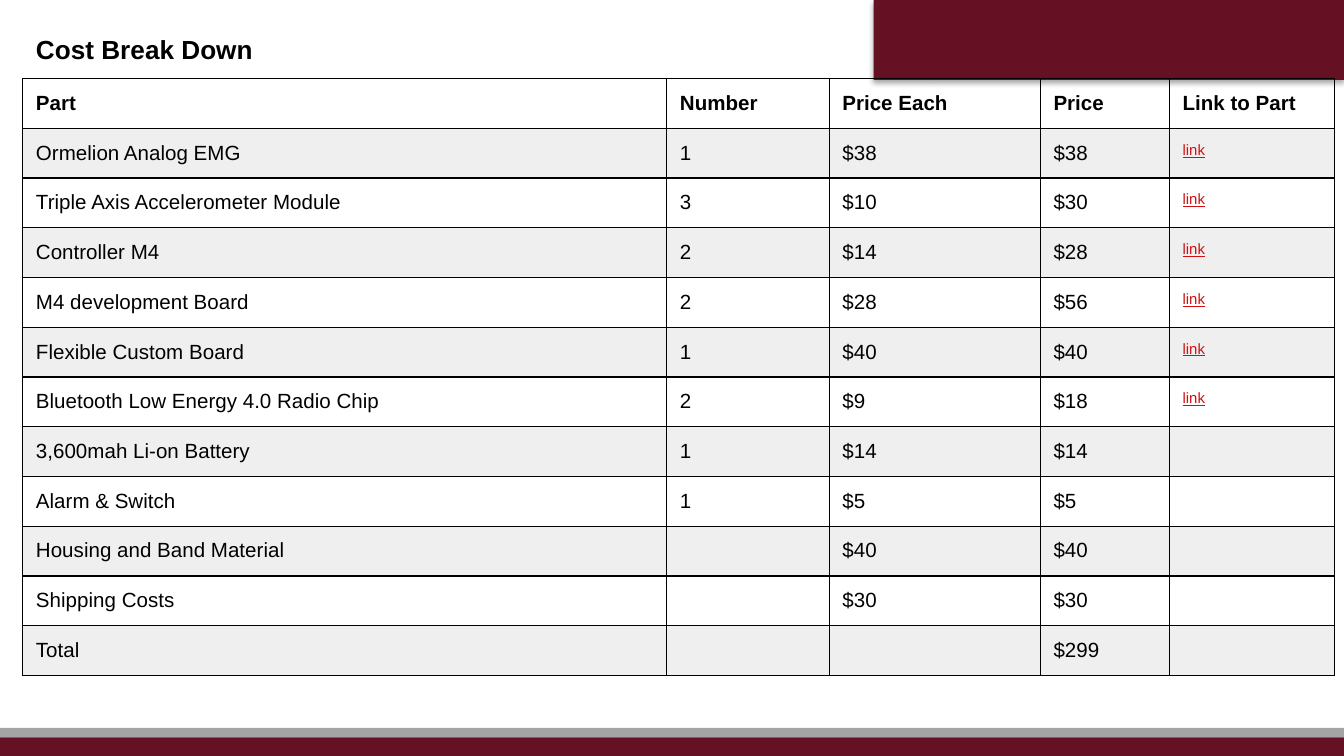
import lxml.etree
import pptx
import pptx.dml.color
import pptx.enum.shapes
import pptx.oxml
import pptx.oxml.ns
import pptx.util
from pptx.util import Cm

MAROON = pptx.dml.color.RGBColor(0x66, 0x10, 0x23)
GRAY = pptx.dml.color.RGBColor(0xA4, 0xA4, 0xA4)
BAND = pptx.dml.color.RGBColor(0xEF, 0xEF, 0xEF)
BLACK = pptx.dml.color.RGBColor(0, 0, 0)
LINK_RED = pptx.dml.color.RGBColor(0xD0, 0x10, 0x10)

TITLE = "Cost Break Down"
HEADER = ("Part", "Number", "Price Each", "Price", "Link to Part")
PARTS = [
    ("Ormelion Analog EMG", "1", "$38", "$38", "link"),
    ("Triple Axis Accelerometer Module", "3", "$10", "$30", "link"),
    ("Controller M4", "2", "$14", "$28", "link"),
    ("M4 development Board", "2", "$28", "$56", "link"),
    ("Flexible Custom Board", "1", "$40", "$40", "link"),
    ("Bluetooth Low Energy 4.0 Radio Chip", "2", "$9", "$18", "link"),
    ("3,600mah Li-on Battery", "1", "$14", "$14", ""),
    ("Alarm & Switch", "1", "$5", "$5", ""),
    ("Housing and Band Material", "", "$40", "$40", ""),
    ("Shipping Costs", "", "$30", "$30", ""),
    ("Total", "", "", "$299", ""),
]
COLUMN_WIDTHS = (12.17, 3.07, 3.99, 2.44, 3.12)
TITLE_HEIGHT = 1.04
ROW_HEIGHT = 0.94

NAMESPACE = pptx.oxml.ns.nsdecls("a")
SHADOW = (
    f'<a:effectLst {NAMESPACE}><a:outerShdw blurRad="39370" dist="22860" dir="5400000">'
    '<a:srgbClr val="000000"><a:alpha val="35000"/></a:srgbClr>'
    "</a:outerShdw></a:effectLst>"
)


class SlideBuilder:
    font_name = "Arial"
    cell_margin = Cm(0.25)
    border_width = pptx.util.Pt(0.75)

    def __init__(self, slide):
        self.slide = slide

    def bar(self, left, top, width, height, color, shadow=False):
        shape = self.slide.shapes.add_shape(
            pptx.enum.shapes.MSO_SHAPE.RECTANGLE, Cm(left), Cm(top), Cm(width), Cm(height)
        )
        shape.fill.solid()
        shape.fill.fore_color.rgb = color
        shape.line.fill.background()
        if shadow:
            shape._element.spPr.append(pptx.oxml.parse_xml(SHADOW))
        else:
            shape.shadow.inherit = False

    def border(self, cell, visible_sides):
        properties = cell._tc.get_or_add_tcPr()
        for side in "LRTB":
            line = lxml.etree.SubElement(
                properties, pptx.oxml.ns.qn(f"a:ln{side}"), w=str(self.border_width)
            )
            if side in visible_sides:
                fill = lxml.etree.SubElement(line, pptx.oxml.ns.qn("a:solidFill"))
                lxml.etree.SubElement(fill, pptx.oxml.ns.qn("a:srgbClr"), val=str(BLACK))
            else:
                lxml.etree.SubElement(line, pptx.oxml.ns.qn("a:noFill"))

    def cell(self, cell, text, size=11, bold=False, color=BLACK, underline=False,
             fill=None, borders="LRTB"):
        cell.margin_left = cell.margin_right = self.cell_margin
        cell.margin_top = cell.margin_bottom = self.cell_margin if text else 0
        cell.text = text
        font = cell.text_frame.paragraphs[0].font
        font.name = self.font_name
        font.size = pptx.util.Pt(size)
        font.bold = bold
        font.underline = underline
        font.color.rgb = color
        self.border(cell, borders)
        if fill is None:
            cell.fill.background()
        else:
            cell.fill.solid()
            cell.fill.fore_color.rgb = fill

    def cost_table(self, left, top, title, header, parts):
        row_count = len(parts) + 2
        table = self.slide.shapes.add_table(
            row_count, len(header), Cm(left), Cm(top), Cm(sum(COLUMN_WIDTHS)),
            Cm(TITLE_HEIGHT + ROW_HEIGHT * (row_count - 1)),
        ).table
        table.first_row = False
        table.horz_banding = False
        for column, width in zip(table.columns, COLUMN_WIDTHS):
            column.width = Cm(width)
        for row in table.rows:
            row.height = Cm(ROW_HEIGHT)
        table.rows[0].height = Cm(TITLE_HEIGHT)

        for column in range(len(header)):
            self.cell(table.cell(0, column), "" if column else title,
                      size=14, bold=True, borders="B")
            self.cell(table.cell(1, column), header[column], bold=True)
        table.cell(0, 0).merge(table.cell(0, len(header) - 1))

        for index, part in enumerate(parts):
            fill = BAND if index % 2 == 0 else None
            for column, text in enumerate(part):
                style = {}
                if text == "link":
                    style = {"size": 8, "color": LINK_RED, "underline": True}
                self.cell(table.cell(index + 2, column), text, fill=fill, **style)


def main():
    presentation = pptx.Presentation()
    presentation.slide_width = Cm(25.4)
    presentation.slide_height = Cm(14.29)
    builder = SlideBuilder(presentation.slides.add_slide(presentation.slide_layouts[6]))
    builder.bar(16.51, 0, 8.89, 1.51, MAROON, shadow=True)
    builder.bar(0, 13.76, 25.4, 0.18, GRAY)
    builder.bar(0, 13.94, 25.4, 0.35, MAROON)
    builder.cost_table(0.43, 0.43, TITLE, HEADER, PARTS)
    presentation.save("out.pptx")


if __name__ == "__main__":
    main()
